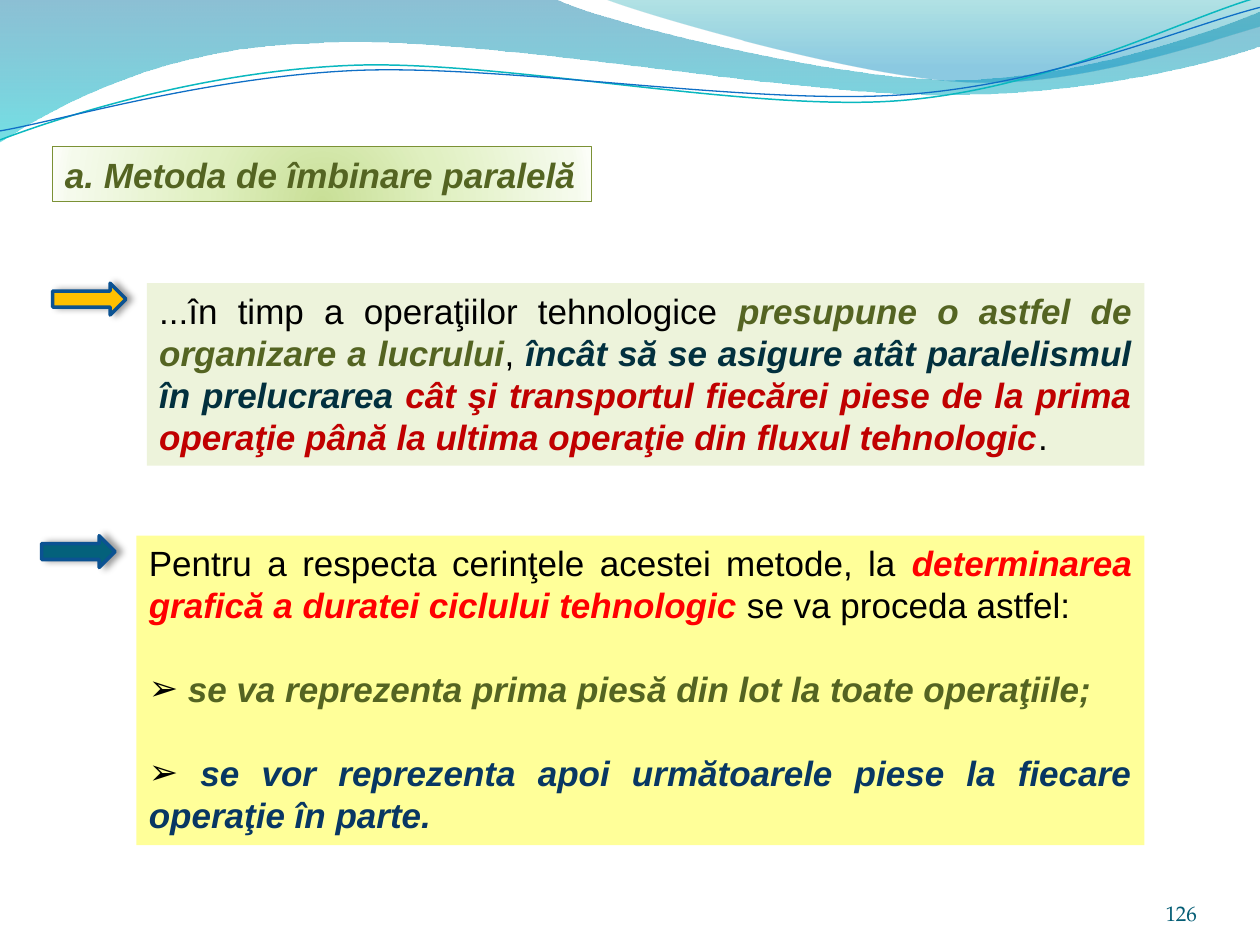
import lxml.etree
import math
import pptx
import pptx.dml.color
import pptx.enum.shapes
import pptx.enum.text
import pptx.oxml.ns
import pptx.util

Cm = pptx.util.Cm
Pt = pptx.util.Pt
qn = pptx.oxml.ns.qn
ALIGN = pptx.enum.text.PP_ALIGN
ANCHOR = pptx.enum.text.MSO_ANCHOR
SHAPE = pptx.enum.shapes.MSO_SHAPE

BLACK, OLIVE, TEAL, CRIMSON, RED, NAVY = (
    "000000", "546422", "02303E", "C00000", "FF0000", "083763")
WAVE_TILT = -2.7

WIDE_BAND = [
    [(0, 0)],
    [(11.18, -0.03)],
    [(12.09, 0.43), (16.87, 1.6), (19.25, 1.6)],
    [(21.67, 1.6), (24.33, 0.66), (25.4, 0.23)],
    [(25.43, 0.91)],
    [(24.97, 1.12), (22.1, 1.93), (18.95, 1.91)],
    [(15.8, 1.91), (9.7, 0.71), (6.53, 0.86)],
    [(3.28, 0.91), (1.17, 2.11), (-0.03, 2.87)],
]
RIGHT_BAND = [
    [(12.17, -0.03)],
    [(12.93, 0.28), (17.32, 1.57), (19.53, 1.65)],
    [(21.74, 1.75), (24.41, 0.81), (25.4, 0.53)],
    [(25.4, 0)],
]
TEAL_WAVE = [
    [(0, 2.82)],
    [(1.22, 2.36), (4.01, 1.45), (7.04, 1.32)],
    [(10.03, 1.19), (15.06, 2.26), (18.11, 2.03)],
    [(21.16, 1.8), (23.83, 0.38), (25.35, -0.05)],
]
BLUE_WAVE = [
    [(0, 2.64)],
    [(1.19, 2.44), (4.17, 1.55), (7.19, 1.42)],
    [(10.24, 1.3), (15.16, 2.13), (18.21, 1.91)],
    [(21.23, 1.7), (23.9, 0.53), (25.4, 0.15)],
]


def rgb(value):
    return pptx.dml.color.RGBColor.from_string(value)


def add_xml(parent, tag, **attributes):
    child = lxml.etree.SubElement(parent, qn(tag))
    for name, value in attributes.items():
        child.set(name, str(value))
    return child


def turn(point, degrees):
    x, y = point
    angle = math.radians(degrees)
    return (x * math.cos(angle) - y * math.sin(angle),
            x * math.sin(angle) + y * math.cos(angle))


def add_outline(slide, segments, close, tilt=0):
    segments = [[tuple(Cm(v) for v in turn(point, -tilt)) for point in segment]
                for segment in segments]
    ends = [segment[-1] for segment in segments]
    builder = slide.shapes.build_freeform(*ends[0])
    builder.add_line_segments(ends[1:], close=close)
    outline = builder.convert_to_shape()
    outline.shadow.inherit = False
    lines = list(outline._element.spPr.iter(qn("a:lnTo")))
    for line, segment in zip(lines, segments[1:]):
        if len(segment) == 3:
            curve = lxml.etree.Element(qn("a:cubicBezTo"))
            for x, y in segment:
                add_xml(curve, "a:pt", x=x - outline.left, y=y - outline.top)
            line.getparent().replace(line, curve)
    half_width, half_height = outline.width / 2, outline.height / 2
    center = turn((outline.left + half_width, outline.top + half_height), tilt)
    outline.left = round(center[0] - half_width)
    outline.top = round(center[1] - half_height)
    outline.rotation = tilt
    return outline


def fill_gradient(shape, stops, circular=False):
    shape.fill.gradient()
    gradient = shape._element.spPr.find(qn("a:gradFill"))
    for child in list(gradient):
        gradient.remove(child)
    stop_list = add_xml(gradient, "a:gsLst")
    for position, color, opacity in stops:
        stop = add_xml(stop_list, "a:gs", pos=position * 1000)
        stop_color = add_xml(stop, "a:srgbClr", val=color)
        if opacity < 100:
            add_xml(stop_color, "a:alpha", val=opacity * 1000)
    if circular:
        focus = add_xml(gradient, "a:path", path="circle")
        add_xml(focus, "a:fillToRect", l=50000, t=130000, r=50000, b=-30000)
    else:
        add_xml(gradient, "a:lin", ang=5400000, scaled=1)


def set_line(shape, color, width):
    shape.line.color.rgb = rgb(color)
    shape.line.width = Pt(width)


def add_band(slide, segments, stops):
    band = add_outline(slide, segments, True)
    fill_gradient(band, stops)
    band.line.fill.background()


def add_wave(slide, segments, color, width):
    wave = add_outline(slide, segments, False, WAVE_TILT)
    wave.fill.background()
    set_line(wave, color, width)


def add_panel(slide, left, top, width, height, fill=None):
    panel = slide.shapes.add_shape(
        SHAPE.RECTANGLE, Cm(left), Cm(top), Cm(width), Cm(height))
    panel.shadow.inherit = False
    panel.line.fill.background()
    if fill:
        panel.fill.solid()
        panel.fill.fore_color.rgb = rgb(fill)
    panel.text_frame.word_wrap = True
    panel.text_frame.vertical_anchor = ANCHOR.TOP
    return panel


def write(paragraph, parts, align=ALIGN.JUSTIFY):
    paragraph.alignment = align
    paragraph.font.size = Pt(20)
    paragraph.font.name = "Arial"
    for words, color in parts:
        run = paragraph.add_run()
        run.text = words
        run.font.color.rgb = rgb(color)
        run.font.bold = run.font.italic = color != BLACK


def add_step(text_frame, words, color):
    step = text_frame.add_paragraph()
    write(step, [(" ", BLACK), (words, color)])
    step.space_before = Pt(23.8)
    properties = step._p.get_or_add_pPr()
    marker = [lxml.etree.Element(qn("a:buFont"), typeface="Arial"),
              lxml.etree.Element(qn("a:buChar"), char="➢")]
    position = properties.index(properties.find(qn("a:defRPr")))
    properties[position:position] = marker


def add_arrow(slide, left, top, fill):
    arrow = slide.shapes.add_shape(
        SHAPE.RIGHT_ARROW, Cm(left), Cm(top), Cm(1.48), Cm(0.64))
    arrow.shadow.inherit = False
    arrow.fill.solid()
    arrow.fill.fore_color.rgb = rgb(fill)
    set_line(arrow, "0B5292", 2)
    effects = arrow._element.spPr.find(qn("a:effectLst"))
    shadow = add_xml(effects, "a:outerShdw", blurRad=Pt(4), dist=Pt(3), dir=0)
    add_xml(add_xml(shadow, "a:srgbClr", val=BLACK), "a:alpha", val=40000)


def add_page_number(slide, number):
    box = slide.shapes.add_textbox(Cm(22.02), Cm(17.65), Cm(2.11), Cm(1.02))
    frame = box.text_frame
    frame.word_wrap = True
    frame.vertical_anchor = ANCHOR.BOTTOM
    frame.margin_left = frame.margin_right = frame.margin_top = frame.margin_bottom = 0
    paragraph = frame.paragraphs[0]
    paragraph.text = number
    paragraph.alignment = ALIGN.RIGHT
    paragraph.font.size = Pt(12)
    paragraph.font.name = "TeX Gyre Pagella"
    paragraph.font.color.rgb = rgb("045D75")


def main():
    deck = pptx.Presentation()
    deck.slide_width, deck.slide_height = Cm(25.4), Cm(19.05)
    slide = deck.slides.add_slide(deck.slide_layouts[6])

    add_band(slide, WIDE_BAND, [(0, "0074A1", 45), (100, "00C6CF", 55)])
    add_band(slide, RIGHT_BAND, [(0, "00A1A9", 30), (80, "008BBF", 45)])
    add_wave(slide, TEAL_WAVE, "0AB8BF", 0.85)
    add_wave(slide, BLUE_WAVE, "0F6FC6", 0.75)
    add_page_number(slide, "126")

    heading = add_panel(slide, 1.06, 2.96, 10.87, 1.11)
    fill_gradient(heading, [(0, "C9DF97", 100), (43, "E0F0C1", 100),
                            (93, "F5FAEC", 100), (100, "FCFEF8", 100)], circular=True)
    set_line(heading, "7B9135", 0.75)
    heading.text_frame.word_wrap = False
    write(heading.text_frame.paragraphs[0],
          [("a. Metoda de îmbinare paralelă", OLIVE)], ALIGN.LEFT)

    definition = add_panel(slide, 2.96, 5.71, 20.11, 3.68, "EDF3DB")
    write(definition.text_frame.paragraphs[0], [
        ("...în timp a operaţiilor tehnologice ", BLACK),
        ("presupune o astfel de organizare a lucrului", OLIVE),
        (", ", BLACK),
        ("încât să se asigure atât paralelismul în prelucrarea ", TEAL),
        ("cât şi transportul fiecărei piese de la prima operaţie până la ultima "
         "operaţie din fluxul tehnologic", CRIMSON),
        (".", BLACK)])
    add_arrow(slide, 1.06, 5.71, "FFC000")

    procedure = add_panel(slide, 2.75, 10.8, 20.32, 6.24, "FFFF99")
    write(procedure.text_frame.paragraphs[0], [
        ("Pentru a respecta cerinţele acestei metode, la ", BLACK),
        ("determinarea grafică a duratei ciclului tehnologic", RED),
        (" se va proceda astfel:", BLACK)])
    add_step(procedure.text_frame,
             "se va reprezenta prima piesă din lot la toate operaţiile;", OLIVE)
    add_step(procedure.text_frame,
             "se vor reprezenta apoi următoarele piese la fiecare operaţie în parte.", NAVY)
    add_arrow(slide, 0.84, 10.8, "04617B")

    deck.save("out.pptx")


if __name__ == "__main__":
    main()
